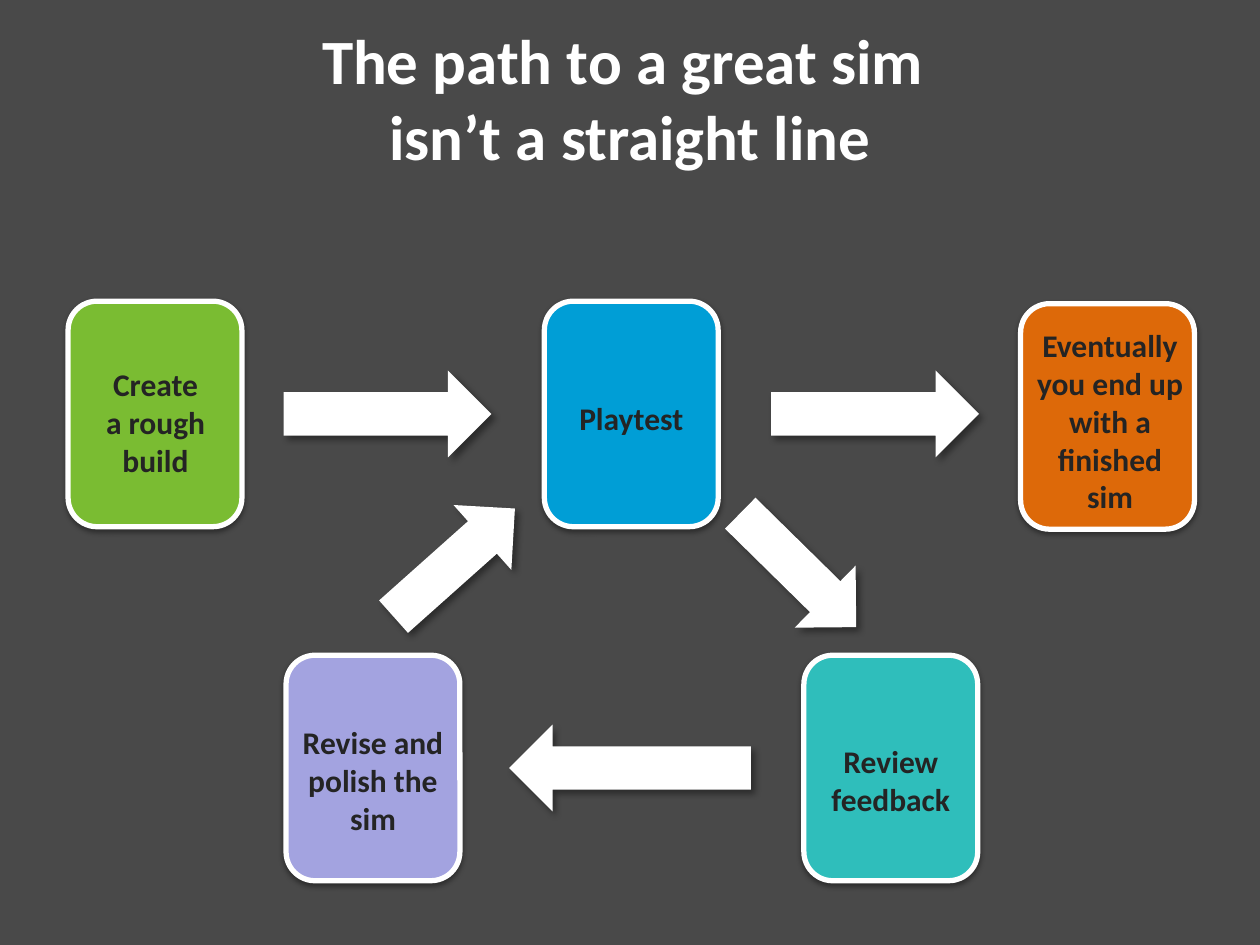
import lxml.etree
import pptx
import pptx.dml.color
import pptx.enum.shapes
import pptx.enum.text
import pptx.oxml.ns
import pptx.util

SHAPE = pptx.enum.shapes.MSO_SHAPE
WHITE = "FFFFFF"
DARK = "242424"
CARD_W, CARD_H = 1.38, 1.79
THICK = 0.69
TOP, LOW = 2.39, 5.2
ROW_TOP, ROW_LOW = 2.94, 5.75

CARDS = [
    (0.54, TOP, "7ABC32", "Create a rough build", (0.72, 2.85, 1.03, 1.32)),
    (4.32, TOP, "009ED6", "Playtest", (4.32, 3.12, CARD_W, 0.53)),
    (8.1, 2.41, "DD6909", "Eventually you end up with a finished sim",
     (8.12, 2.54, CARD_W, 1.61)),
    (6.38, LOW, "2FBEBB", "Review feedback", (6.38, 5.84, CARD_W, 0.71)),
    (2.27, LOW, "A3A3E0", "Revise and polish the sim", (2.27, 5.69, CARD_W, 1.01)),
]
ARROWS = [
    (2.25, ROW_TOP, 1.65, 0),
    (6.12, ROW_TOP, 1.65, 0),
    (2.96, 4.12, 1.29, 318.3),
    (4.04, ROW_LOW, 1.92, 180),
    (5.69, 4.18, 1.29, 44.5),
]


def place(*box):
    return [pptx.util.Inches(side) for side in box]


def paint(fill, code):
    fill.solid()
    fill.fore_color.rgb = pptx.dml.color.RGBColor.from_string(code)


def write(frame, *lines, size=18, color=DARK):
    frame.word_wrap = True
    frame.auto_size = pptx.enum.text.MSO_AUTO_SIZE.NONE
    frame.vertical_anchor = pptx.enum.text.MSO_ANCHOR.TOP
    for i, line in enumerate(lines):
        para = frame.add_paragraph() if i else frame.paragraphs[0]
        para.alignment = pptx.enum.text.PP_ALIGN.CENTER
        run = para.add_run()
        run.text = line
        run.font.name = "Calibri"
        run.font.size = pptx.util.Pt(size)
        run.font.bold = True
        paint(run.font.fill, color)


def shade(shape, alpha, blur, dist, angle):
    shape.shadow.inherit = False
    name = pptx.oxml.ns.qn
    effects = shape._element.spPr.find(name("a:effectLst"))
    outer = lxml.etree.SubElement(
        effects, name("a:outerShdw"), blurRad=str(pptx.util.Pt(blur)),
        dist=str(pptx.util.Pt(dist)), dir=str(angle * 60000),
        algn="ctr", rotWithShape="0")
    color = lxml.etree.SubElement(outer, name("a:srgbClr"), val="000000")
    lxml.etree.SubElement(color, name("a:alpha"), val=str(alpha * 1000))


def head(slide, box):
    title = slide.shapes.title
    title.left, title.top, title.width, title.height = place(*box)
    write(title.text_frame, "The path to a great sim ", "isn’t a straight line",
          size=36, color=WHITE)


def card(slide, box, color, text, area):
    group = slide.shapes.add_group_shape()
    tile = group.shapes.add_shape(SHAPE.ROUNDED_RECTANGLE, *place(*box))
    paint(tile.fill, color)
    paint(tile.line.fill, WHITE)
    tile.line.width = pptx.util.Pt(3)
    shade(tile, 38, 3.1, 1.6, 90)
    label = group.shapes.add_textbox(*place(*area))
    write(label.text_frame, text)


def arrow(slide, box, turn):
    shape = slide.shapes.add_shape(SHAPE.RIGHT_ARROW, *place(*box))
    shape.rotation = turn
    paint(shape.fill, WHITE)
    shape.line.fill.background()
    shade(shape, 40, 4, 3, 45)


def main():
    deck = pptx.Presentation()
    deck.slide_width, deck.slide_height = place(10, 7.5)
    slide = deck.slides.add_slide(deck.slide_layouts[5])
    paint(slide.background.fill, "494949")
    head(slide, (0, 0.12, 10, 1.31))
    for left, top, color, text, area in CARDS:
        card(slide, (left, top, CARD_W, CARD_H), color, text, area)
    for left, top, width, turn in ARROWS:
        arrow(slide, (left, top, width, THICK), turn)
    deck.save("out.pptx")


if __name__ == "__main__":
    main()
